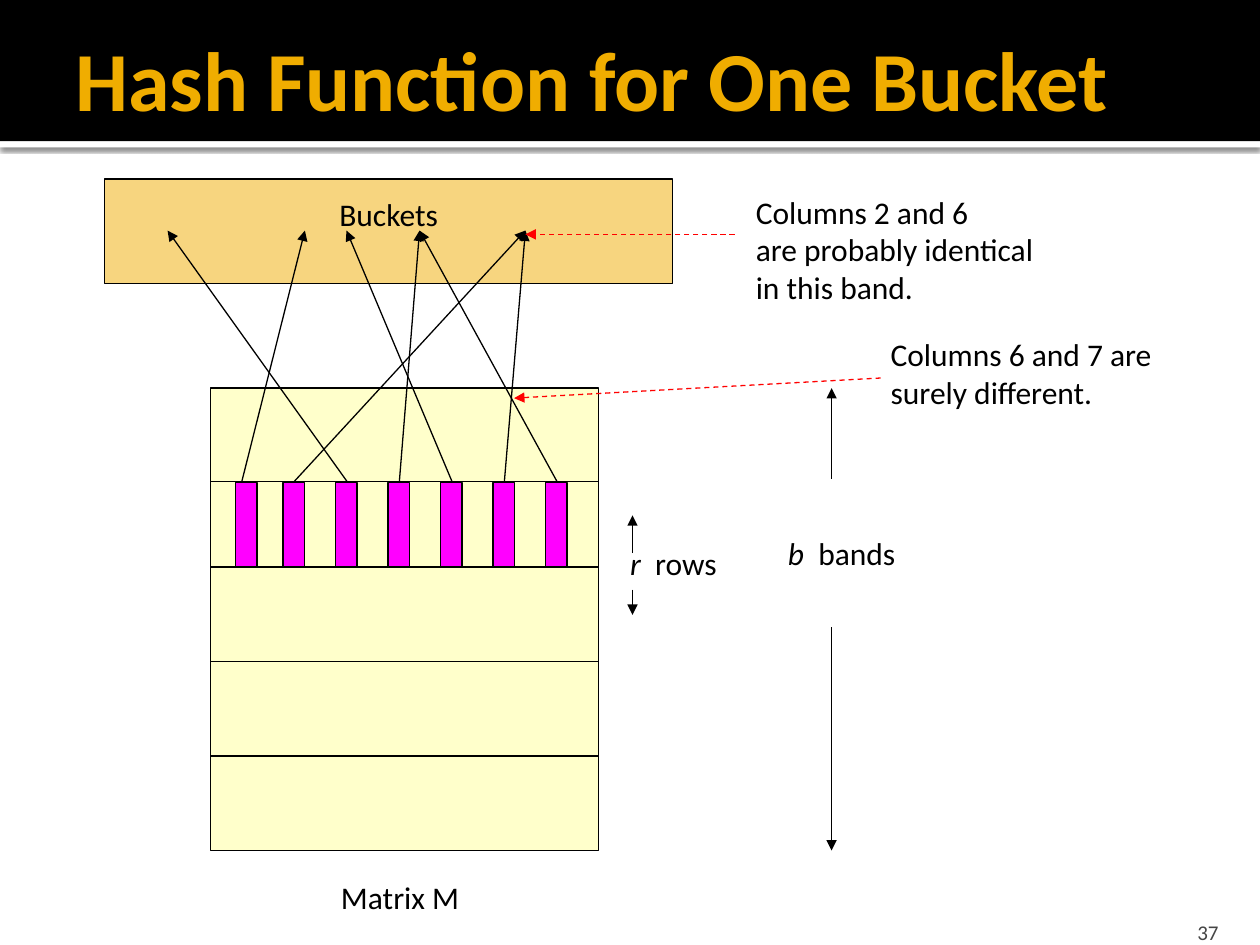
import pptx
import pptx.dml.color
import pptx.enum.dml
import pptx.enum.shapes
import pptx.enum.text
import pptx.oxml
import pptx.oxml.ns
import pptx.util
from pptx.util import Inches

RGBColor = pptx.dml.color.RGBColor
PP_ALIGN = pptx.enum.text.PP_ALIGN
MSO_ANCHOR = pptx.enum.text.MSO_ANCHOR

BLACK = RGBColor(0x00, 0x00, 0x00)
WHITE = RGBColor(0xFF, 0xFF, 0xFF)
GOLD = RGBColor(0xF0, 0xAD, 0x00)
YELLOW = RGBColor(0xFF, 0xFF, 0x99)
MAGENTA = RGBColor(0xFF, 0x00, 0xFF)
RED = RGBColor(0xFF, 0x00, 0x00)
GRAY = RGBColor(0x45, 0x45, 0x45)

NS = pptx.oxml.ns.nsdecls("a")


class Diagram:
    """Draws styled elements on one slide."""

    font = "Calibri"
    size = 18
    line_width = pptx.util.Pt(0.75)

    def __init__(self, slide):
        self.s = slide

    def style(self, p, size=None, color=BLACK, align=None, bold=None):
        p.font.name = self.font
        p.font.size = pptx.util.Pt(size or self.size)
        p.font.color.rgb = color
        p.font.bold = bold
        p.alignment = align

    def title(self, text, x, y, w, h):
        sp = self.s.shapes.title
        sp.left, sp.top, sp.width, sp.height = map(Inches, (x, y, w, h))
        tf = sp.text_frame
        tf.text = text
        tf.vertical_anchor = MSO_ANCHOR.MIDDLE
        tf.margin_right = Inches(0.05)
        self.style(tf.paragraphs[0], 48, GOLD, PP_ALIGN.LEFT, True)
        sp.element.getparent().append(sp.element)  # in front of the header bar

    def rect(self, x, y, w, h, fill, outline=True, alpha=None):
        sp = self.s.shapes.add_shape(
            pptx.enum.shapes.MSO_SHAPE.RECTANGLE, *map(Inches, (x, y, w, h)))
        sp.shadow.inherit = False
        sp.fill.solid()
        sp.fill.fore_color.rgb = fill
        if alpha:
            clr = sp.element.spPr.find(".//" + pptx.oxml.ns.qn("a:srgbClr"))
            clr.append(pptx.oxml.parse_xml(f'<a:alpha {NS} val="{alpha * 1000}"/>'))
        if outline:
            sp.line.color.rgb = BLACK
            sp.line.width = self.line_width
        else:
            sp.line.fill.background()
        return sp

    def line(self, x1, y1, x2, y2, color=BLACK, arrow=True, dashed=False):
        c = self.s.shapes.add_connector(
            pptx.enum.shapes.MSO_CONNECTOR.STRAIGHT, *map(Inches, (x1, y1, x2, y2)))
        c.line.color.rgb = color
        c.line.width = self.line_width
        if dashed:
            c.line.dash_style = pptx.enum.dml.MSO_LINE.DASH
        if arrow:
            c.line._get_or_add_ln().append(
                pptx.oxml.parse_xml(f'<a:tailEnd {NS} type="triangle"/>'))
        c.element.spPr.append(pptx.oxml.parse_xml(f"<a:effectLst {NS}/>"))

    def text(self, x, y, w, h, *lines, align=None, size=None, color=BLACK):
        """Each line is a list of (text, italic) runs or a plain string."""
        tf = self.s.shapes.add_textbox(*map(Inches, (x, y, w, h))).text_frame
        tf.word_wrap = False
        for i, line in enumerate(lines):
            p = tf.add_paragraph() if i else tf.paragraphs[0]
            self.style(p, size, color, align)
            for words, italic in [(line, None)] if isinstance(line, str) else line:
                r = p.add_run()
                r.text = words
                r.font.italic = italic
        return tf


def main():
    prs = pptx.Presentation()
    prs.slide_width, prs.slide_height = Inches(10), Inches(7.5)
    d = Diagram(prs.slides.add_slide(prs.slide_layouts[5]))

    # Header bar with a shadowed white rule, title and page number
    rule = d.rect(0, 1.12, 10, 0.05, WHITE, outline=False)
    rule.element.spPr.find(pptx.oxml.ns.qn("a:effectLst")).append(pptx.oxml.parse_xml(
        f'<a:outerShdw {NS} blurRad="31750" dist="10160" dir="5400000">'
        '<a:srgbClr val="000000"><a:alpha val="60000"/></a:srgbClr></a:outerShdw>'))
    d.rect(0, 0, 10, 1.12, BLACK, outline=False)
    d.title("Hash Function for One Bucket", 0.5, 0.08, 9.5, 1.08)
    tf = d.text(8.97, 7.2, 0.8, 0.3, "37", align=PP_ALIGN.RIGHT, size=12, color=GRAY)
    tf.word_wrap = True
    tf.vertical_anchor = MSO_ANCHOR.BOTTOM
    tf.margin_bottom = 0

    # Matrix divided into bands
    left, right, top, bottom = 1.67, 4.75, 3.08, 6.75
    column_top = 3.82
    d.rect(left, top, right - left, bottom - top, YELLOW, alpha=50)
    for y in (column_top, 4.5, 5.25, 6):
        d.line(left, y, right, y, arrow=False)
    d.text(2.6, 6.92, 1.15, 0.4, "Matrix M", align=PP_ALIGN.CENTER)

    # Bucket area
    tf = d.rect(0.83, 1.42, 4.51, 0.83, GOLD, alpha=50).text_frame
    tf.text = "Buckets"
    tf.vertical_anchor = MSO_ANCHOR.TOP
    tf.margin_top = Inches(0.13)
    d.style(tf.paragraphs[0], align=PP_ALIGN.CENTER)

    # Each column of the band hashes to a bucket
    pitch = 5 / 12
    for i, bucket_x in enumerate((2.42, 4.17, 1.33, 3.33, 2.75, 4.17, 3.33)):
        bar_x = 1.83 + i * pitch if i else 1.87
        d.rect(bar_x, 3.83, 0.17, 0.67, MAGENTA)
        d.line(1.92 + i * pitch, column_top, bucket_x, 1.83)

    # Remarks with dashed pointers
    d.text(6.97, 2.61, 2.49, 0.7, "Columns 6 and 7 are", "surely different.")
    d.line(6.99, 3, 4.08, 3.16, RED, dashed=True)
    d.text(5.9, 1.48, 2.45, 1.01,
           "Columns 2 and 6", "are probably identical", "in this band.")
    d.line(5.83, 1.86, 4.17, 1.86, RED, dashed=True)

    # Row and band dimensions
    d.text(4.86, 4.27, 0.97, 0.47, [("r ", True), (" rows", False)],
           align=PP_ALIGN.CENTER)
    d.text(6.1, 4.19, 1.16, 0.47, [("b ", True), (" bands", False)],
           align=PP_ALIGN.CENTER)
    for x, start, end in ((5.02, 4.39, 4.09), (5.02, 4.68, 4.88),
                          (6.6, 3.8, top), (6.6, 4.98, bottom)):
        d.line(x, start, x, end)

    prs.save("out.pptx")


if __name__ == "__main__":
    main()
